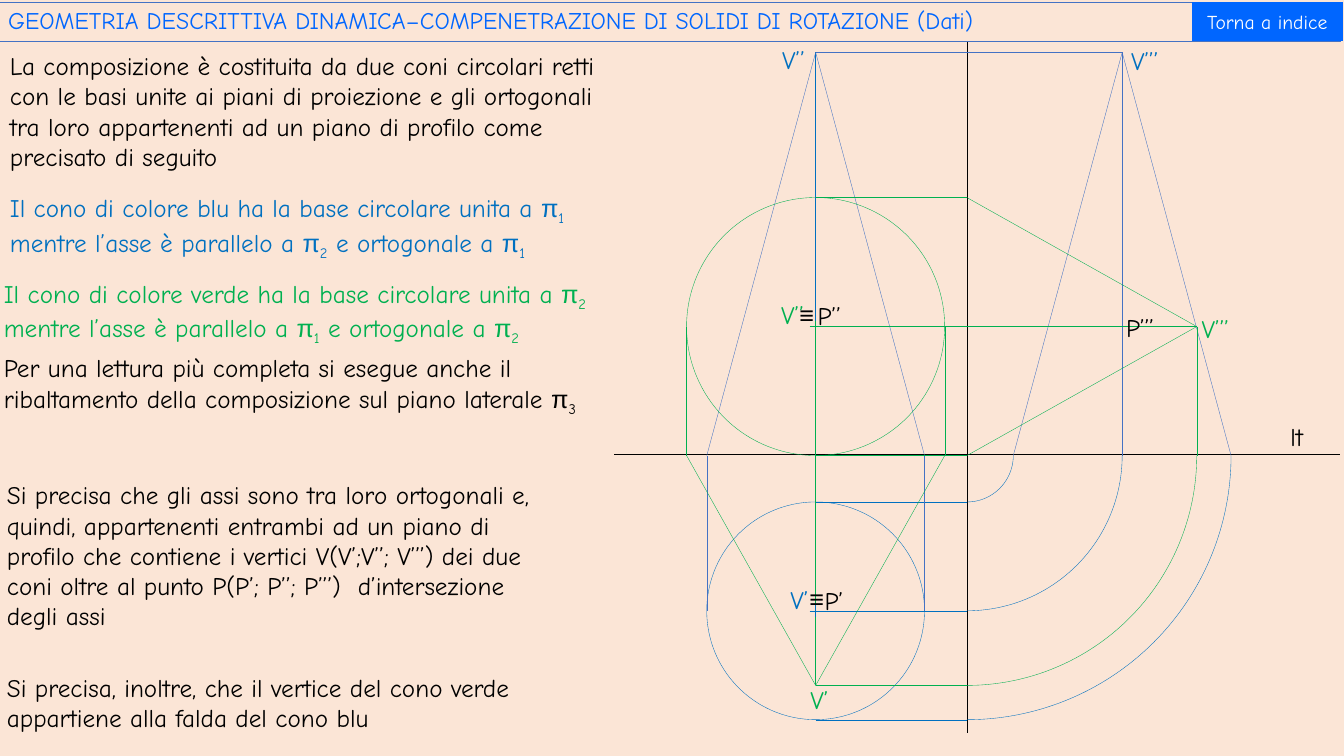
from lxml import etree
from pptx import Presentation
from pptx import util as u
from pptx.dml.color import RGBColor
from pptx.enum import shapes, text
from pptx.oxml.ns import qn

COLORS = {"bg": "FBE5D6", "black": "000000", "blue": "0070C0", "indigo": "4472C4",
          "green": "00B050", "link": "0066FF", "white": "FFFFFF"}
FONT, SYMBOL_FONT = "Comic Neue", "Arial"


def rgb(name):
    return RGBColor.from_string(COLORS[name])


class Drawing:
    """Style and current slide."""

    def __init__(self, s, line_width=0.25, size=18):
        self.s, self.line_width, self.size = s, line_width, size

    def outline(self, sp, color):
        sp.line.color.rgb = rgb(color)
        sp.line.width = u.Pt(self.line_width)

    def run(self, p, words, color, size=None, font=FONT, subscript=False):
        r = p.add_run()
        r.text = words
        r.font.name, r.font.size = font, u.Pt(size or self.size)
        r.font.color.rgb = rgb(color)
        if subscript:
            r._r.get_or_add_rPr().set("baseline", "-25000")

    def title(self, words, x, y, w, h):
        sp = self.s.shapes.title
        sp.left, sp.top, sp.width, sp.height = map(u.Inches, (x, y, w, h))
        self.outline(sp, "indigo")
        tf = sp.text_frame
        tf.auto_size = text.MSO_AUTO_SIZE.NONE
        tf.vertical_anchor = text.MSO_ANCHOR.MIDDLE
        p = tf.paragraphs[0]
        p.alignment, p.line_spacing = text.PP_ALIGN.LEFT, 0.9
        self.run(p, words, "link", 17)

    def text(self, words, color, x, y, w, h=0.4, font=FONT):
        """Text box; a digit right after π becomes its subscript."""
        tf = self.s.shapes.add_textbox(*map(u.Inches, (x, y, w, h))).text_frame
        tf.word_wrap = True
        tf.auto_size = text.MSO_AUTO_SIZE.SHAPE_TO_FIT_TEXT
        p = tf.paragraphs[0]
        start, *rest = words.split("π")
        self.run(p, start, color, font=font)
        for piece in rest:
            self.run(p, "π", color, font=SYMBOL_FONT)
            self.run(p, piece[0], color, subscript=True)
            if piece[1:]:
                self.run(p, piece[1:], color)

    def line(self, color, x1, y1, x2, y2, parent=None):
        sp = (parent or self.s).shapes.add_connector(
            shapes.MSO_CONNECTOR.STRAIGHT, *map(u.Inches, (x1, y1, x2, y2)))
        self.outline(sp, color)
        etree.SubElement(sp._element.spPr, qn("a:effectLst"))

    def cross(self, color, cx, cy, arm=0.06):
        group = self.s.shapes.add_group_shape()
        self.line(color, cx - arm, cy, cx + arm, cy, group)
        self.line(color, cx, cy - arm, cx, cy + arm, group)

    def round(self, kind, color, cx, cy, radius):
        sp = self.s.shapes.add_shape(
            kind, *map(u.Inches, (cx - radius, cy - radius, 2 * radius, 2 * radius)))
        sp.shadow.inherit = False
        sp.fill.background()
        self.outline(sp, color)
        return sp

    def circle(self, color, cx, cy, radius):
        self.round(shapes.MSO_SHAPE.OVAL, color, cx, cy, radius)

    def quarter(self, color, cx, cy, radius):
        """Lower right quarter of a circle."""
        sp = self.round(shapes.MSO_SHAPE.ARC, color, cx, cy, radius)
        sp.adjustments[0], sp.adjustments[1] = 0, 54

    def button(self, words, x, y, w, h):
        sp = self.s.shapes.add_shape(shapes.MSO_SHAPE.ACTION_BUTTON_CUSTOM,
                                     *map(u.Inches, (x, y, w, h)))
        sp.shadow.inherit = False
        sp.fill.solid()
        sp.fill.fore_color.rgb = rgb("link")
        sp.line.fill.background()
        tf = sp.text_frame
        tf.vertical_anchor = text.MSO_ANCHOR.MIDDLE
        p = tf.paragraphs[0]
        p.alignment = text.PP_ALIGN.CENTER
        self.run(p, words, "white", 14)


def main():
    prs = Presentation()
    prs.slide_width, prs.slide_height = u.Inches(13.33), u.Inches(7.5)
    s = prs.slides.add_slide(prs.slide_layouts[5])
    s.background.fill.solid()
    s.background.fill.fore_color.rgb = rgb("bg")
    d = Drawing(s)
    d.title("GEOMETRIA DESCRITTIVA DINAMICA–COMPENETRAZIONE DI SOLIDI DI ROTAZIONE (Dati)",
            -0.02, 0.02, 13.31, 0.39)

    # Key positions: cone axis, profile fold, ground line, cone centres and vertices
    axis, fold, lt = 8.09, 9.59, 4.52
    green_y, green_r, green_v = 3.24, 1.28, 6.8
    blue_y, blue_r, blue_v = 6.06, 1.08, 0.52
    side_axis = fold + blue_y - lt
    side_v = fold + green_v - lt

    # Reference lines
    d.line("black", 6.09, 4.51, 13.29, 4.51)
    d.line("black", fold, 0.42, fold, 7.27)

    # Blue cone: base, projections, and turn onto the side plane
    d.circle("blue", axis, blue_y, blue_r)
    d.line("blue", axis, blue_v, axis, 6.15)
    d.line("indigo", axis, blue_v, side_axis, blue_v)
    d.line("indigo", side_axis, blue_v, side_axis, lt)
    for y in (blue_y - blue_r, blue_y, blue_y + blue_r):
        d.line("blue", axis, y, fold, y)
        d.quarter("blue", fold, lt, y - lt)
        if y != blue_y:
            d.line("indigo", side_axis, blue_v, fold + y - lt, lt)
    for x in (axis - blue_r, axis + blue_r):
        d.line("indigo", x, blue_y, x, lt)
        d.line("indigo", axis, blue_v, x, lt)

    # Green cone
    d.circle("green", axis, green_y, green_r)
    d.line("green", axis, green_y, side_v, green_y)
    d.line("green", axis, green_y, axis, green_v)
    d.line("green", axis, green_v, fold, green_v)
    d.quarter("green", fold, lt, green_v - lt)
    d.line("green", side_v, green_y, side_v, lt)
    for y in (green_y - green_r, green_y + green_r):
        d.line("green", axis, y, fold, y)
        d.line("green", fold, y, side_v, green_y)
    for x in (axis - green_r, axis + green_r):
        d.line("green", x, green_y, x, lt)
        d.line("green", x, lt, axis, green_v)

    # Centre marks
    d.cross("green", axis, green_y)
    d.cross("blue", axis, blue_y)

    # Point labels
    for words, color, x, y in (
            ("V’’", "blue", 7.66, 0.39), ("V’’’", "blue", 11.12, 0.4),
            ("V’’’", "green", 11.82, 3.06), ("V’", "green", 7.94, 6.74),
            ("V’’", "green", 7.65, 2.92), ("V’", "blue", 7.74, 5.75),
            ("lt", "black", 12.7, 4.13), ("P’’’", "black", 11.07, 3.05),
            ("P’’", "black", 8.01, 2.93), ("P’", "black", 8.08, 5.76)):
        d.text(words, color, x, y, 0.51)
    for x, y in ((7.83, 2.92), (7.93, 5.74)):
        d.text("≡", "black", x, y, 0.43, font=SYMBOL_FONT)

    # Explanations
    d.text("La composizione è costituita da due coni circolari retti con le basi unite ai "
           "piani di proiezione e gli ortogonali tra loro appartenenti ad un piano di "
           "profilo come precisato di seguito", "black", 0, 0.45, 6.22, 1.31)
    d.text("Il cono di colore blu ha la base circolare unita a π1 mentre l’asse è parallelo "
           "a π2 e ortogonale a π1", "blue", 0, 1.86, 5.88, 0.71)
    d.text("Il cono di colore verde ha la base circolare unita a π2 mentre l’asse è "
           "parallelo a π1 e ortogonale a π2", "green", -0.06, 2.71, 6.08, 0.71)
    d.text("Per una lettura più completa si esegue anche il ribaltamento della composizione "
           "sul piano laterale π3", "black", -0.06, 3.45, 5.91, 1.01)
    d.text("Si precisa che gli assi sono tra loro ortogonali e, quindi, appartenenti "
           "entrambi ad un piano di profilo che contiene i vertici V(V’;V’’; V’’’) dei due "
           "coni oltre al punto P(P’; P’’; P’’’)  d’intersezione degli assi",
           "black", -0.03, 4.71, 5.67, 1.62)
    d.text("Si precisa, inoltre, che il vertice del cono verde appartiene alla falda del "
           "cono blu", "black", -0.03, 6.62, 6.19, 0.71)

    # Link back to the index
    d.button("Torna a indice", 11.82, 0.02, 1.5, 0.39)
    prs.save("out.pptx")


if __name__ == "__main__":
    main()
